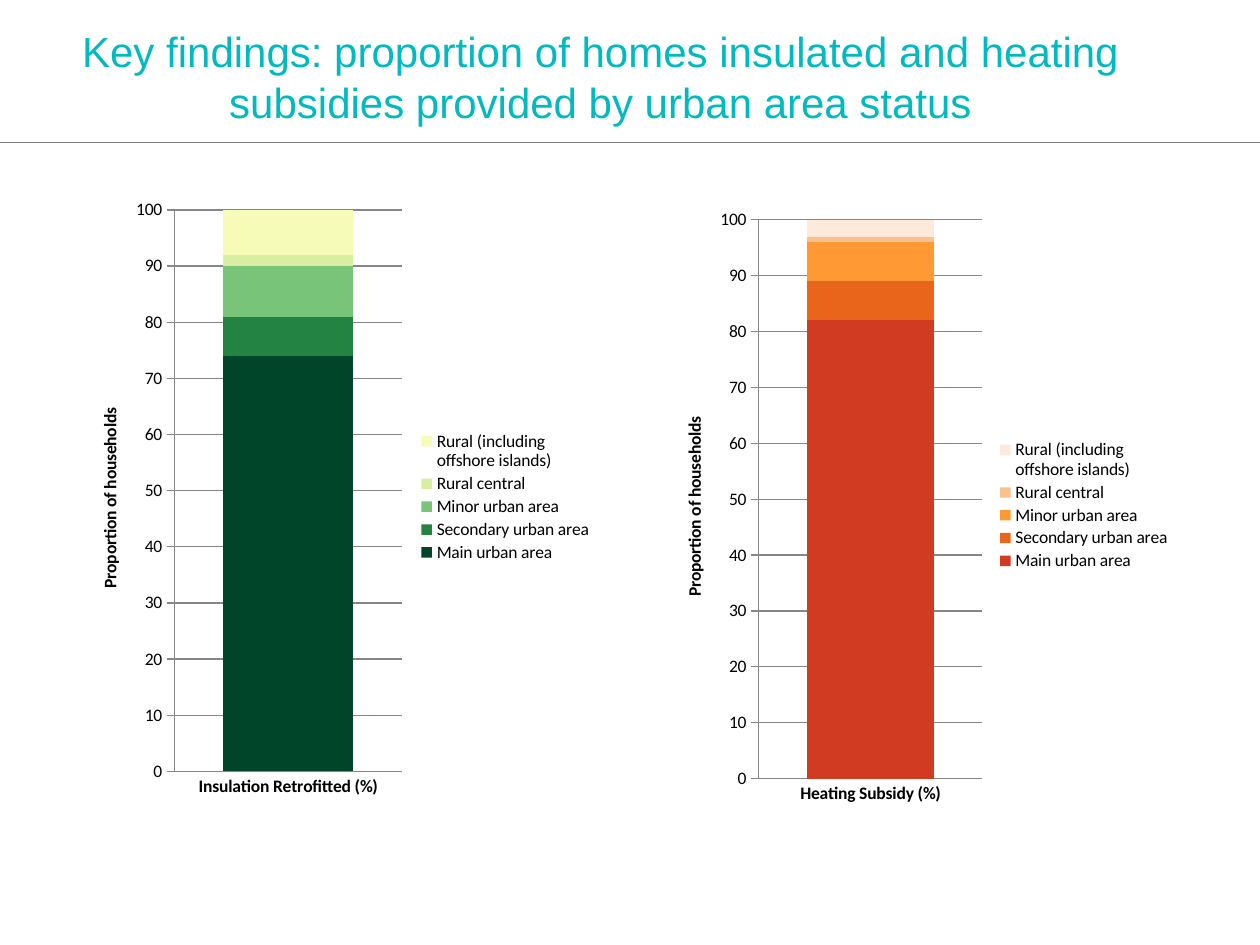
from lxml import etree
from pptx import Presentation
from pptx.chart.data import CategoryChartData
from pptx.dml.color import RGBColor
from pptx.enum.chart import XL_CHART_TYPE as ChartType, XL_LEGEND_POSITION as LegendPos, XL_TICK_MARK as Tick
from pptx.enum.text import MSO_ANCHOR as Anchor, MSO_AUTO_SIZE as AutoSize, PP_ALIGN as Align
from pptx.oxml.ns import qn
from pptx.util import Pt

PX = 914400 // 126
COLORS = {"title": "00BABF", "rule": "808080", "text": "000000", "grid": "868686"}
AREAS = ["Main urban area", "Secondary urban area", "Minor urban area",
         "Rural central", "Rural (including offshore islands)"]
CHARTS = [
    ("Insulation Retrofitted (%)", (74, 185, 529, 624), [74, 7, 9, 2, 8],
     ["004529", "238343", "78C579", "D8EFA2", "F6FBB8"]),
    ("Heating Subsidy (%)", (660, 195, 520, 621), [82, 7, 7, 1, 3],
     ["D03B22", "EA651C", "FF9933", "FAC090", "FDEADA"]),
]


def color(name):
    return RGBColor.from_string(COLORS.get(name, name))


def set_layout(parent, index, inner, fractions):
    for old in parent.findall(qn("c:layout")):
        parent.remove(old)
    layout = etree.Element(qn("c:layout"))
    manual = etree.SubElement(layout, qn("c:manualLayout"))
    settings = [("layoutTarget", "inner")] if inner else []
    settings += [("xMode", "edge"), ("yMode", "edge")]
    settings += list(zip("xywh", fractions))
    for tag, value in settings:
        etree.SubElement(manual, qn("c:" + tag)).set("val", str(value))
    parent.insert(index, layout)


deck = Presentation()
deck.slide_width, deck.slide_height = 1260 * PX, 945 * PX
page = deck.slides.add_slide(deck.slide_layouts[5])

rule = page.shapes.add_connector(1, 0, 142 * PX, 1260 * PX, 142 * PX)
rule.line.color.rgb = color("rule")
rule.line.width = Pt(0.25)
etree.SubElement(rule._element.spPr, qn("a:effectLst"))

title = page.shapes.title
title.left, title.top, title.width, title.height = [n * PX for n in (58, 16, 1085, 120)]
frame = title.text_frame
frame.text = "Key findings: proportion of homes insulated and heating subsidies provided by urban area status"
frame.word_wrap = True
frame.auto_size = AutoSize.NONE
frame.vertical_anchor = Anchor.MIDDLE
para = frame.paragraphs[0]
para.alignment = Align.CENTER
font = para.runs[0].font
font.name, font.size = "Arial", Pt(24)
font.color.rgb = color("title")

for category, place, values, fills in CHARTS:
    data = CategoryChartData(number_format="0")
    data.categories = [category]
    for area, value in zip(AREAS, values):
        data.add_series(area, [value])
    chart = page.shapes.add_chart(ChartType.COLUMN_STACKED, *[n * PX for n in place], data).chart
    chart.has_title = False
    chart.font.name, chart.font.size = "Calibri", Pt(10)
    chart.font.color.rgb = color("text")

    plot = chart.plots[0]
    plot.gap_width, plot.overlap = 75, 100
    plot.vary_by_categories = False
    for series, fill in zip(plot.series, fills):
        series.format.fill.solid()
        series.format.fill.fore_color.rgb = color(fill)

    value_axis, category_axis = chart.value_axis, chart.category_axis
    value_axis.minimum_scale, value_axis.maximum_scale, value_axis.major_unit = 0, 100, 10
    value_axis.major_tick_mark = Tick.OUTSIDE
    value_axis.has_major_gridlines = True
    value_axis.tick_labels.number_format = "0"
    value_axis.tick_labels.number_format_is_linked = False
    axis_title = value_axis.axis_title.text_frame
    axis_title.text = "Proportion of households"
    font = axis_title.paragraphs[0].runs[0].font
    font.name, font.size, font.bold = "Calibri", Pt(10), True
    font.color.rgb = color("text")
    category_axis.major_tick_mark = Tick.NONE
    category_axis.tick_labels.font.bold = True
    for part in (value_axis, category_axis, value_axis.major_gridlines):
        part.format.line.color.rgb = color("grid")
        part.format.line.width = Pt(0.75)

    chart.has_legend = True
    chart.legend.position = LegendPos.RIGHT
    chart.legend.include_in_layout = False
    set_layout(chart._chartSpace.chart.plotArea, 0, True, (0.19, 0.04, 0.43, 0.9))
    set_layout(chart.legend._element, 1, False, (0.65, 0.39, 0.33, 0.22))

deck.save("out.pptx")
